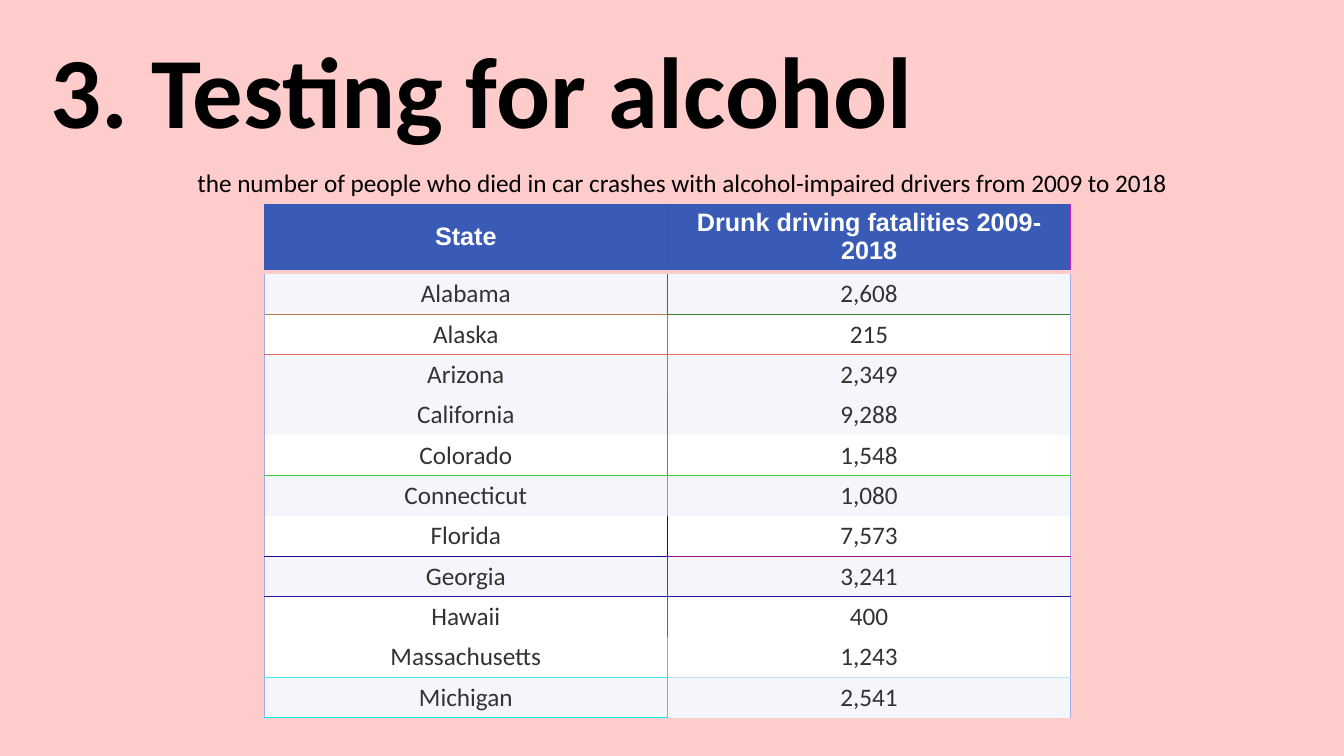
from pptx import Presentation
from pptx.dml.color import RGBColor
from pptx.enum.text import MSO_ANCHOR, PP_ALIGN
from pptx.oxml import parse_xml
from pptx.oxml.ns import nsdecls
from pptx.util import Inches, Pt

COLORS = {
    "background": "FFCCCC",
    "title": "000000",
    "header_fill": "395BB6",
    "header_text": "FFFFFF",
    "state_text": "333333",
    "tinted": "F4F6FC",
    "plain": "FFFFFF",
    "outer_edge": "A1ACE6",
    "header_divider": "9022C6",
    "header_edge": "D01CC6",
}
NO_STYLE = "{2D5ABB26-0587-4C30-8999-92F81FD0307C}"
TABLE_LEFT, HEADER_TOP, STATES_TOP = 2.62, 2.02, 2.72
COLUMN_WIDTH, HEADER_HEIGHT, STATE_HEIGHT = 4, 0.66, 0.4

# fmt: off
STATE_GROUPS = [
    [("Alabama", "2,608", "tinted", "407739", "C07B39", "407B39")],
    [("Alaska", "215", "plain", "A0766C", "E06A6C", "E0776C"),
     ("Arizona", "2,349", "tinted", "A0786C", None, None)],
    [("California", "9,288", "tinted", "5076C5", "5072C5", "9079C5")],
    [("Colorado", "1,548", "plain", "00C239", "40C739", "40D039"),
     ("Connecticut", "1,080", "tinted", "40D439", None, None)],
    [("Florida", "7,573", "plain", "20049A", "200A9A", "A00D9A"),
     ("Georgia", "3,241", "tinted", "A0109A", "201B9A", "20149A"),
     ("Hawaii", "400", "plain", "E01A9A", None, None)],
    [("Massachusetts", "1,243", "plain", "00E7EF", "40EEEF", "C0E4EF"),
     ("Michigan", "2,541", "tinted", "00E9EF", "00ECEF", None)],
]
# fmt: on


def add_text(paragraph, text, size, font, color, bold=False):
    run = paragraph.add_run()
    run.text = text
    run.font.size = Pt(size)
    run.font.name = font
    run.font.bold = bold
    run.font.color.rgb = RGBColor.from_string(color)


def set_borders(cell, borders, width):
    properties = cell._tc.get_or_add_tcPr()
    sides = [side for side in "LRTB" if borders.get(side)]
    for position, side in enumerate(sides):
        properties.insert(position, parse_xml(
            f'<a:ln{side} {nsdecls("a")} w="{Pt(width)}"><a:solidFill>'
            f'<a:srgbClr val="{borders[side]}"/></a:solidFill></a:ln{side}>'))


def fill_cell(cell, text, fill, font, color, bold, borders, width):
    cell.fill.solid()
    cell.fill.fore_color.rgb = RGBColor.from_string(fill)
    cell.vertical_anchor = MSO_ANCHOR.MIDDLE
    cell.margin_top = cell.margin_bottom = Inches(0.04)
    paragraph = cell.text_frame.paragraphs[0]
    paragraph.alignment = PP_ALIGN.CENTER
    add_text(paragraph, text, 18, font, color, bold)
    set_borders(cell, borders, width)


def add_plain_table(slide, top, row_count, row_height):
    frame = slide.shapes.add_table(
        row_count, 2, Inches(TABLE_LEFT), Inches(top),
        Inches(2 * COLUMN_WIDTH), Inches(row_count * row_height))
    table = frame.table
    table.first_row = table.horz_banding = False
    table._tbl.tblPr.find("{*}tableStyleId").text = NO_STYLE
    for row in table.rows:
        row.height = Inches(row_height)
    return table


def add_header(slide):
    table = add_plain_table(slide, HEADER_TOP, 1, HEADER_HEIGHT)
    divider = COLORS["header_divider"]
    columns = [("State", {"R": divider}),
               ("Drunk driving fatalities 2009-2018",
                {"L": divider, "R": COLORS["header_edge"]})]
    for column, (label, borders) in enumerate(columns):
        fill_cell(table.cell(0, column), label, COLORS["header_fill"], "Arial",
                  COLORS["header_text"], True, borders, 1)


def add_states(slide, top, states):
    table = add_plain_table(slide, top, len(states), STATE_HEIGHT)
    edge = COLORS["outer_edge"]
    above = (None, None)
    for row, (state, deaths, shade, divider, *below) in enumerate(states):
        sides = [(edge, divider), (divider, edge)]
        for column, text in enumerate((state, deaths)):
            left, right = sides[column]
            borders = {"L": left, "R": right, "T": above[column], "B": below[column]}
            fill_cell(table.cell(row, column), text, COLORS[shade], "Calibri",
                      COLORS["state_text"], False, borders, 0.6)
        above = below


def add_title(slide):
    title = slide.shapes.title
    title.left, title.top = Inches(0.4), Inches(0.25)
    title.width, title.height = Inches(13.33), Inches(1.24)
    title.text_frame.vertical_anchor = MSO_ANCHOR.MIDDLE
    paragraph = title.text_frame.paragraphs[0]
    paragraph.alignment = PP_ALIGN.LEFT
    add_text(paragraph, "3. Testing for alcohol", 72, "Calibri", COLORS["title"], True)


def add_caption(slide):
    caption = slide.shapes.add_textbox(
        Inches(1.86), Inches(1.61), Inches(10.4), Inches(0.4))
    caption.text_frame.word_wrap = True
    add_text(caption.text_frame.paragraphs[0],
             "the number of people who died in car crashes with "
             "alcohol-impaired drivers from 2009 to 2018",
             18, "Calibri", COLORS["title"])


def main():
    deck = Presentation()
    deck.slide_width, deck.slide_height = Inches(13.33), Inches(7.5)
    slide = deck.slides.add_slide(deck.slide_layouts[5])
    slide.background.fill.solid()
    slide.background.fill.fore_color.rgb = RGBColor.from_string(COLORS["background"])

    add_title(slide)
    add_header(slide)
    add_caption(slide)
    top = STATES_TOP
    for states in STATE_GROUPS:
        add_states(slide, top, states)
        top += len(states) * STATE_HEIGHT
    deck.save("out.pptx")


if __name__ == "__main__":
    main()
